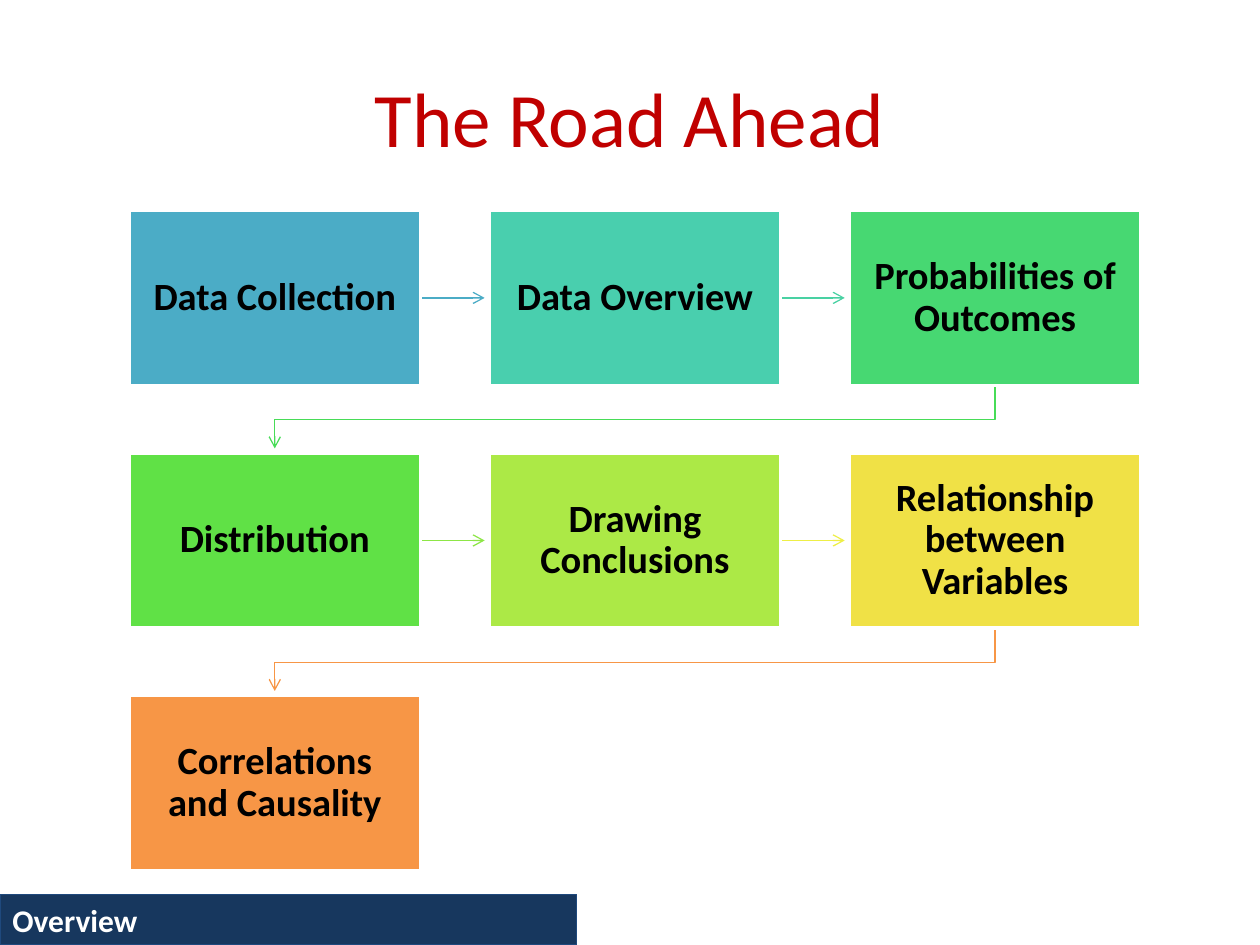
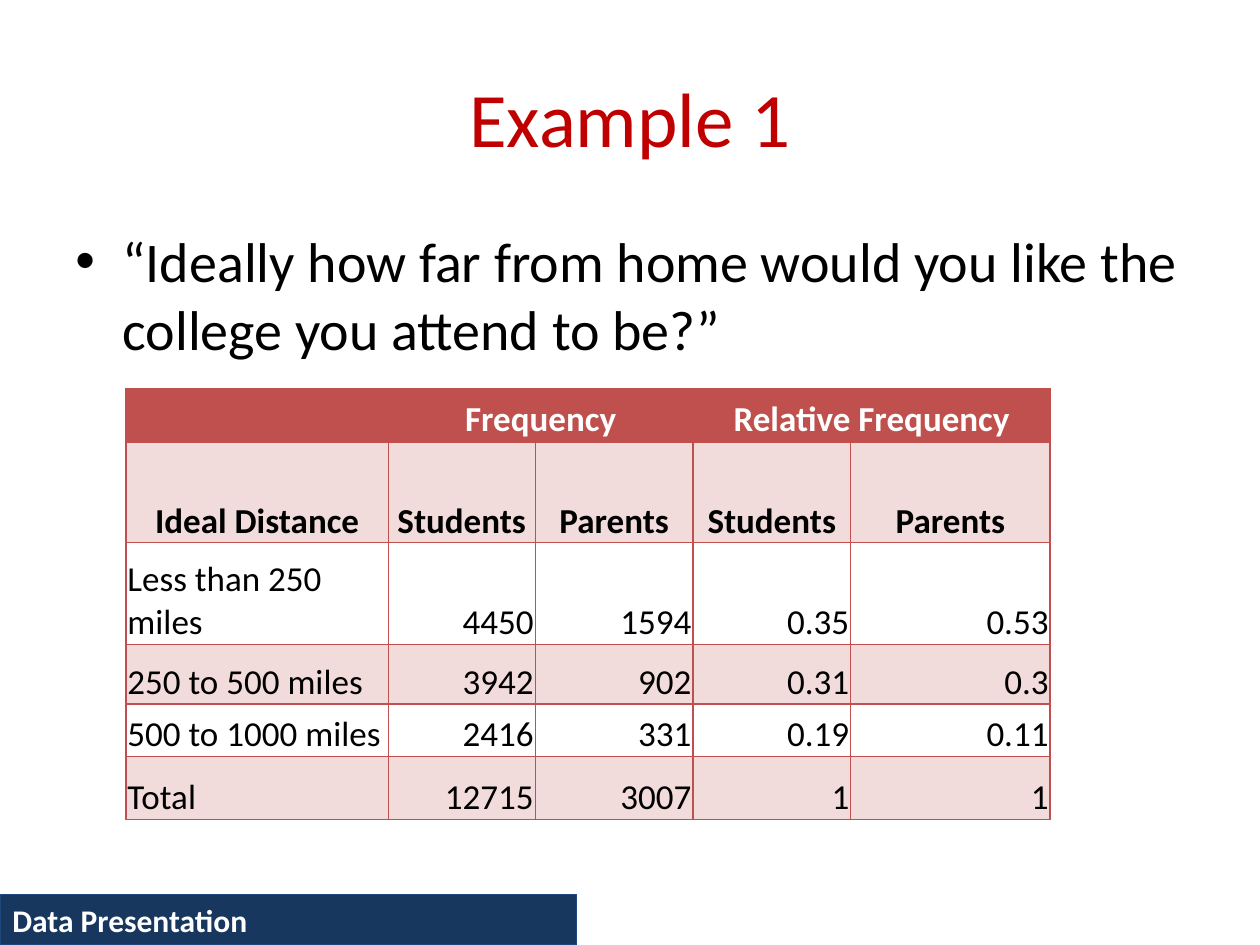
from lxml import etree
from pptx import Presentation
from pptx import util as u
from pptx.dml.color import RGBColor
from pptx.enum import shapes, text
from pptx.oxml import ns

FONT = "Calibri"
BLACK = RGBColor(0x00, 0x00, 0x00)
WHITE = RGBColor(0xFF, 0xFF, 0xFF)
TITLE_RED = RGBColor(0xC0, 0x00, 0x00)
BAND_NAVY = RGBColor(0x17, 0x37, 0x5E)
BAND_EDGE = RGBColor(0x1F, 0x49, 0x7D)
TABLE_RED = RGBColor(0xC0, 0x50, 0x4D)
TABLE_TINT = RGBColor(0xF2, 0xDC, 0xDB)
LEFT, CENTER, RIGHT = (text.PP_ALIGN.LEFT, text.PP_ALIGN.CENTER,
                       text.PP_ALIGN.RIGHT)
TOP, MIDDLE, BOTTOM = (text.MSO_ANCHOR.TOP, text.MSO_ANCHOR.MIDDLE,
                       text.MSO_ANCHOR.BOTTOM)

# Each step: label, box colour, colour of the arrow leaving it
STEPS = [
    ("Data Collection", "4BACC6", "4BACC6"),
    ("Data Overview", "49CFAE", "49D1A3"),
    ("Probabilities of Outcomes", "47D872", "47DC57"),
    ("Distribution", "60E146", "8DE646"),
    ("Drawing Conclusions", "ACE946", "EEEF46"),
    ("Relationship between Variables", "F0E146", "F79646"),
    ("Correlations and Causality", "F79646", None),
]
DISTANCE_ROWS = [
    ["", "Frequency", "", "Relative Frequency", ""],
    ["Ideal Distance", "Students", "Parents", "Students", "Parents"],
    ["Less than 250 miles", "4450", "1594", "0.35", "0.53"],
    ["250 to 500 miles", "3942", "902", "0.31", "0.3"],
    ["500 to 1000 miles", "2416", "331", "0.19", "0.11"],
    ["Total", "12715", "3007", "1", "1"],
]
COLUMN_WIDTHS = [5.29, 2.96, 3.18, 3.18, 4.02]
ROW_HEIGHTS = [1.06, 2.05, 2.05, 1.2, 1.06, 1.27]


def write(frame, content, size=18, color=BLACK, bold=False, align=LEFT,
          anchor=TOP, inset=None, line_spacing=None, space_before=None):
    """Fill a text frame with one formatted paragraph and return it."""
    frame.word_wrap = True
    frame.vertical_anchor = anchor
    if inset is not None:
        frame.margin_left = frame.margin_right = u.Cm(inset)
        frame.margin_top = frame.margin_bottom = u.Cm(inset)
    paragraph = frame.paragraphs[0]
    paragraph.alignment = align
    if line_spacing:
        paragraph.line_spacing = line_spacing
    if space_before:
        paragraph.space_before = u.Pt(space_before)
    run = paragraph.add_run()
    run.text = content
    run.font.name = FONT
    run.font.size = u.Pt(size)
    run.font.bold = bold
    run.font.color.rgb = color
    return paragraph


def add_border(cell, side, width):
    properties = cell._tc.get_or_add_tcPr()
    line = etree.SubElement(properties, ns.qn(f"a:ln{side}"),
                            w=str(u.Pt(width)))
    fill = etree.SubElement(line, ns.qn("a:solidFill"))
    etree.SubElement(fill, ns.qn("a:srgbClr"), val=str(TABLE_RED))


class Deck:
    """Holds the shared style and the slide being built."""

    def __init__(self):
        self.presentation = Presentation()
        self.presentation.slide_width = u.Cm(25.4)
        self.presentation.slide_height = u.Cm(19.05)
        self.slide = None

    def start_slide(self, title, section):
        layout = self.presentation.slide_layouts[6]
        self.slide = self.presentation.slides.add_slide(layout)
        self.text_box((1.27, 0.76, 22.86, 3.18), title, size=44,
                      color=TITLE_RED, align=CENTER, anchor=MIDDLE)
        self.box((0, 18.03, 11.63, 1.02), BAND_NAVY, BAND_EDGE, 0.75,
                 section, size=18, color=WHITE, bold=True, anchor=MIDDLE)

    def text_box(self, bounds, content, **style):
        shape = self.slide.shapes.add_textbox(*map(u.Cm, bounds))
        return write(shape.text_frame, content, **style)

    def bullet(self, bounds, content, **style):
        paragraph = self.text_box(bounds, content, **style)
        properties = paragraph._p.get_or_add_pPr()
        indent = u.Cm(0.95)
        properties.set("marL", str(indent))
        properties.set("indent", str(-indent))
        etree.SubElement(properties, ns.qn("a:buFont"), typeface="Arial")
        etree.SubElement(properties, ns.qn("a:buChar"), char="•")

    def box(self, bounds, fill, edge, edge_width, content, **style):
        shape = self.slide.shapes.add_shape(
            shapes.MSO_SHAPE.RECTANGLE, *map(u.Cm, bounds))
        shape.shadow.inherit = False
        shape.fill.solid()
        shape.fill.fore_color.rgb = fill
        shape.line.color.rgb = edge
        shape.line.width = u.Pt(edge_width)
        write(shape.text_frame, content, **style)

    def arrow(self, points, color):
        """Draw a connector for two points, a bent open line for more."""
        points = [(u.Cm(x), u.Cm(y)) for x, y in points]
        if len(points) == 2:
            line_shape = self.slide.shapes.add_connector(
                shapes.MSO_CONNECTOR.STRAIGHT, *points[0], *points[1])
        else:
            builder = self.slide.shapes.build_freeform(*points[0])
            builder.add_line_segments(points[1:], close=False)
            line_shape = builder.convert_to_shape()
            line_shape.fill.background()
        line_shape.line.color.rgb = color
        line_shape.line.width = u.Pt(0.75)
        etree.SubElement(line_shape.line._get_or_add_ln(),
                         ns.qn("a:tailEnd"), type="arrow")
        etree.SubElement(line_shape._element.spPr, ns.qn("a:effectLst"))

    def table(self, left, top, rows, widths, heights):
        table = self.slide.shapes.add_table(
            len(rows), len(widths), u.Cm(left), u.Cm(top),
            u.Cm(sum(widths)), u.Cm(sum(heights))).table
        table.first_row = table.horz_banding = False
        for column, width in zip(table.columns, widths):
            column.width = u.Cm(width)
        for row, height in zip(table.rows, heights):
            row.height = u.Cm(height)
        for first in (1, 3):
            table.cell(0, first).merge(table.cell(0, first + 1))
        for i, values in enumerate(rows):
            for j, value in enumerate(values):
                self.table_cell(table.cell(i, j), i, j, value)

    def table_cell(self, cell, i, j, value):
        heading = i < 2
        for side in "LRTB":
            add_border(cell, side, 2 if (i, side) == (0, "B") else 1)
        if i == 0 or i % 2:
            cell.fill.solid()
            cell.fill.fore_color.rgb = TABLE_TINT if i else TABLE_RED
        else:
            cell.fill.background()
        cell.margin_left = cell.margin_right = cell.margin_top = u.Cm(0.03)
        cell.margin_bottom = 0
        cell.vertical_anchor = BOTTOM
        if value:
            write_cell_align = CENTER if heading else RIGHT if j else LEFT
            write(cell.text_frame, value, size=20, bold=heading,
                  color=BLACK if i else WHITE, align=write_cell_align,
                  anchor=BOTTOM)


def build_road(deck):
    deck.start_slide("The Road Ahead", "Overview")
    left, top, width, height = 2.6, 4.24, 5.88, 3.53
    step_x, step_y, columns = 7.26, 4.89, 3
    reach_x, reach_y = 1.29, 1.27
    for index, (label, fill, arrow_color) in enumerate(STEPS):
        row, column = divmod(index, columns)
        x, y = left + column * step_x, top + row * step_y
        # Arrow to the next step, bent at the end of a row
        if arrow_color:
            if column < columns - 1:
                middle = y + height / 2
                points = [(x + width, middle), (x + width + reach_x, middle)]
            else:
                start, end = x + width / 2, left + width / 2
                bottom = y + height
                bend = bottom + 0.69
                points = [(start, bottom), (start, bend), (end, bend),
                          (end, bottom + reach_y)]
            deck.arrow(points, RGBColor.from_string(arrow_color))
        deck.box((x, y, width, height), RGBColor.from_string(fill), WHITE, 2,
                 label, size=22, bold=True, align=CENTER, anchor=MIDDLE,
                 inset=0.42, line_spacing=0.9)


def build_example(deck):
    deck.start_slide("Example 1", "Data Presentation")
    deck.bullet((1.27, 4.45, 22.86, 12.57),
                "“Ideally how far from home would you like the college "
                "you attend to be?”", size=32, space_before=6.4)
    deck.table(2.54, 7.83, DISTANCE_ROWS, COLUMN_WIDTHS, ROW_HEIGHTS)


def main():
    deck = Deck()
    build_road(deck)
    build_example(deck)
    deck.presentation.save("out.pptx")


if __name__ == "__main__":
    main()
